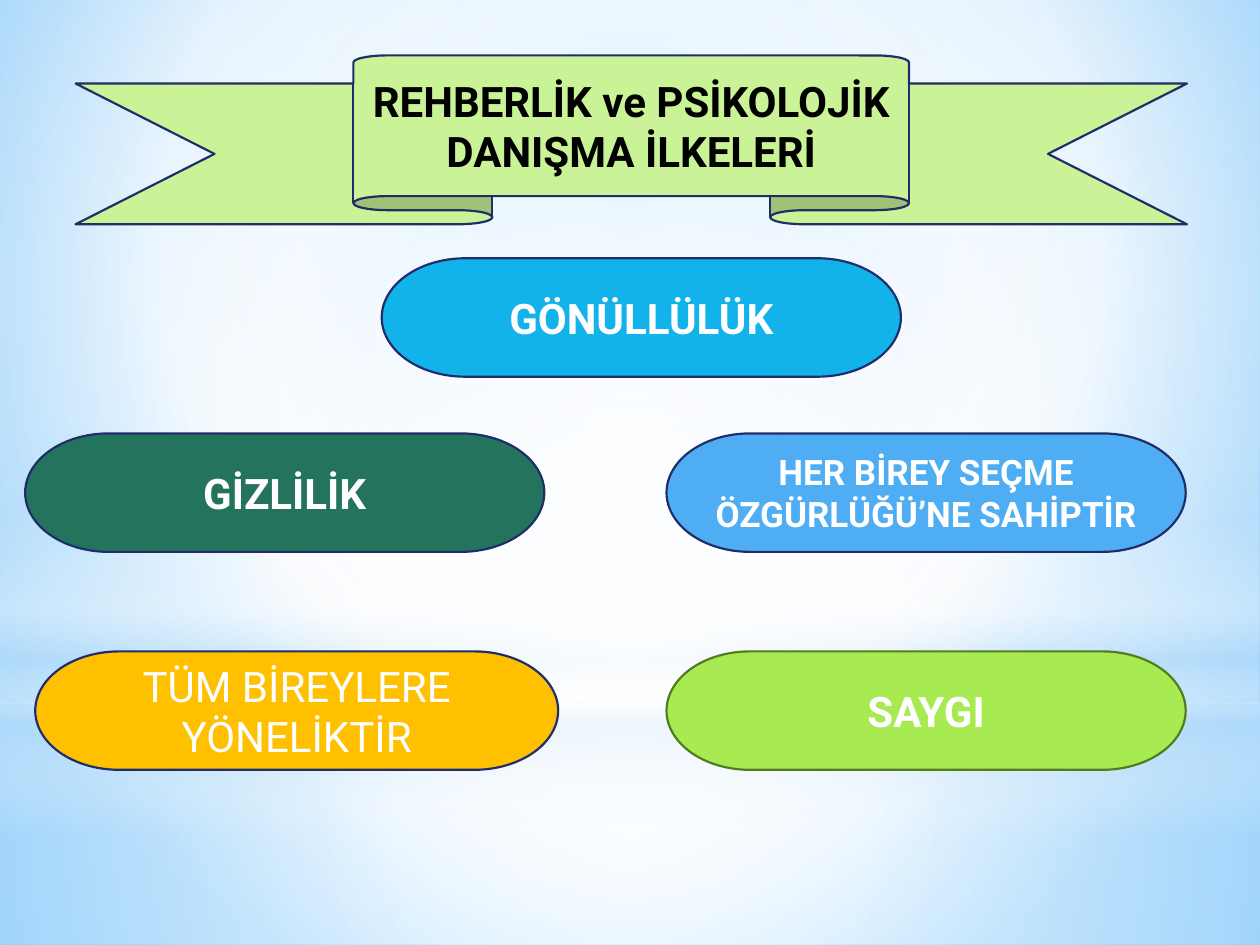
from lxml.etree import SubElement
from pptx import Presentation
from pptx.dml.color import RGBColor
from pptx.enum.shapes import MSO_SHAPE
from pptx.enum.text import MSO_ANCHOR, PP_ALIGN
from pptx.oxml.ns import qn
from pptx.util import Inches, Pt

FONT = "Roboto"
WHITE = RGBColor(0xFF, 0xFF, 0xFF)
BLACK = RGBColor(0x00, 0x00, 0x00)
PALE_BLUE = RGBColor(0xB4, 0xDC, 0xFA)
SKY = RGBColor(0x9E, 0xD5, 0xFF)
DEEP_SKY = RGBColor(0x5B, 0xB9, 0xFF)
NAVY = RGBColor(0x1F, 0x2E, 0x69)
PALE_LIME = RGBColor(0xCA, 0xF2, 0x97)
LIME = RGBColor(0xA7, 0xEA, 0x52)
OLIVE = RGBColor(0x53, 0x7C, 0x1F)
CYAN = RGBColor(0x12, 0xB2, 0xEB)
GREEN = RGBColor(0x23, 0x73, 0x5D)
AMBER = RGBColor(0xFF, 0xC0, 0x00)
BLUE = RGBColor(0x4F, 0xAD, 0xF3)

CENTER = (50, 50, 50, 50)
PILL_W, PILL_H = 4.12, 0.94
LEFT_X, RIGHT_X = 0.2, 5.29
ROW_1, ROW_2, ROW_3 = 2.05, 3.44, 5.17


def set_gradient(props, stops, focus=None, angle=90):
    """Swap the solid fill in props for a gradient of (position, colour, opacity)."""
    solid = props.find(qn("a:solidFill"))
    grad = props.makeelement(qn("a:gradFill"), {"rotWithShape": "1"})
    props.replace(solid, grad)
    stop_list = SubElement(grad, qn("a:gsLst"))
    for position, color, opacity in stops:
        gs = SubElement(stop_list, qn("a:gs"), pos=str(position * 1000))
        clr = SubElement(gs, qn("a:srgbClr"), val=str(color))
        if opacity < 100:
            SubElement(clr, qn("a:alpha"), val=str(opacity * 1000))
    if focus:
        circle = SubElement(grad, qn("a:path"), {"path": "circle"})
        edges = {side: str(v * 1000) for side, v in zip("ltrb", focus)}
        SubElement(circle, qn("a:fillToRect"), edges)
    else:
        SubElement(grad, qn("a:lin"), ang=str(angle * 60000), scaled="0")


def add_filled(s, kind, x, y, w, h, fill):
    sp = s.shapes.add_shape(kind, Inches(x), Inches(y), Inches(w), Inches(h))
    sp.shadow.inherit = False
    sp.fill.solid()
    sp.fill.fore_color.rgb = fill
    return sp


def add_glow(s, kind, y, h, stops, focus=None):
    sp = add_filled(s, kind, 0, y, 10, h, WHITE)
    sp.line.fill.background()
    set_gradient(sp.element.spPr, stops, focus)


def add_label(s, kind, x, y, w, h, text, fill, line=NAVY, color=WHITE, size=24, bold=True):
    sp = add_filled(s, kind, x, y, w, h, fill)
    sp.line.color.rgb = line
    sp.line.width = Pt(1.25)
    tf = sp.text_frame
    tf.word_wrap = True
    tf.vertical_anchor = MSO_ANCHOR.MIDDLE
    p = tf.paragraphs[0]
    p.text = text
    p.alignment = PP_ALIGN.CENTER
    p.font.name = FONT
    p.font.size = Pt(size)
    p.font.bold = bold
    p.font.color.rgb = color


def add_pill(s, x, y, text, fill, w=PILL_W, **style):
    add_label(s, MSO_SHAPE.FLOWCHART_TERMINATOR, x, y, w, PILL_H, text, fill, **style)


def add_backdrop(s):
    s.background.fill.solid()
    set_gradient(s.element.find(".//" + qn("p:bgPr")),
                 [(0, SKY, 100), (60, WHITE, 100), (100, DEEP_SKY, 100)], (20, 10, 20, 60))
    # Lower and upper glows
    add_glow(s, MSO_SHAPE.RECTANGLE, 5.58, 1.92,
             [(0, WHITE, 91), (37, WHITE, 76), (100, PALE_BLUE, 79)], CENTER)
    add_glow(s, MSO_SHAPE.RECTANGLE, 0, 5.58,
             [(0, WHITE, 89), (48, WHITE, 62), (100, PALE_BLUE, 79)], CENTER)
    # Horizon band
    add_glow(s, MSO_SHAPE.RECTANGLE, 4.12, 2.5,
             [(0, WHITE, 0), (29, WHITE, 30), (45, PALE_BLUE, 40),
              (55, WHITE, 26), (65, PALE_BLUE, 60), (100, WHITE, 0)])
    # Central light
    add_glow(s, MSO_SHAPE.OVAL, 1.75, 5.58, [(0, WHITE, 100), (56, WHITE, 0)], CENTER)


def main():
    prs = Presentation()
    prs.slide_width, prs.slide_height = Inches(10), Inches(7.5)
    s = prs.slides.add_slide(prs.slide_layouts[6])
    add_backdrop(s)

    # Heading ribbon
    add_label(s, MSO_SHAPE.UP_RIBBON, 0.6, 0.44, 8.82, 1.34,
              "REHBERLİK ve PSİKOLOJİK DANIŞMA İLKELERİ", PALE_LIME, color=BLACK)

    # Principles
    add_pill(s, 3.03, ROW_1, "GÖNÜLLÜLÜK", CYAN)
    add_pill(s, LEFT_X, ROW_2, "GİZLİLİK", GREEN)
    add_pill(s, 0.28, ROW_3, "TÜM BİREYLERE YÖNELİKTİR", AMBER, w=4.15, bold=False)
    add_pill(s, RIGHT_X, ROW_2, "HER BİREY SEÇME ÖZGÜRLÜĞÜ’NE SAHİPTİR", BLUE, size=20)
    add_pill(s, RIGHT_X, ROW_3, "SAYGI", LIME, line=OLIVE)

    prs.save("out.pptx")


if __name__ == "__main__":
    main()
